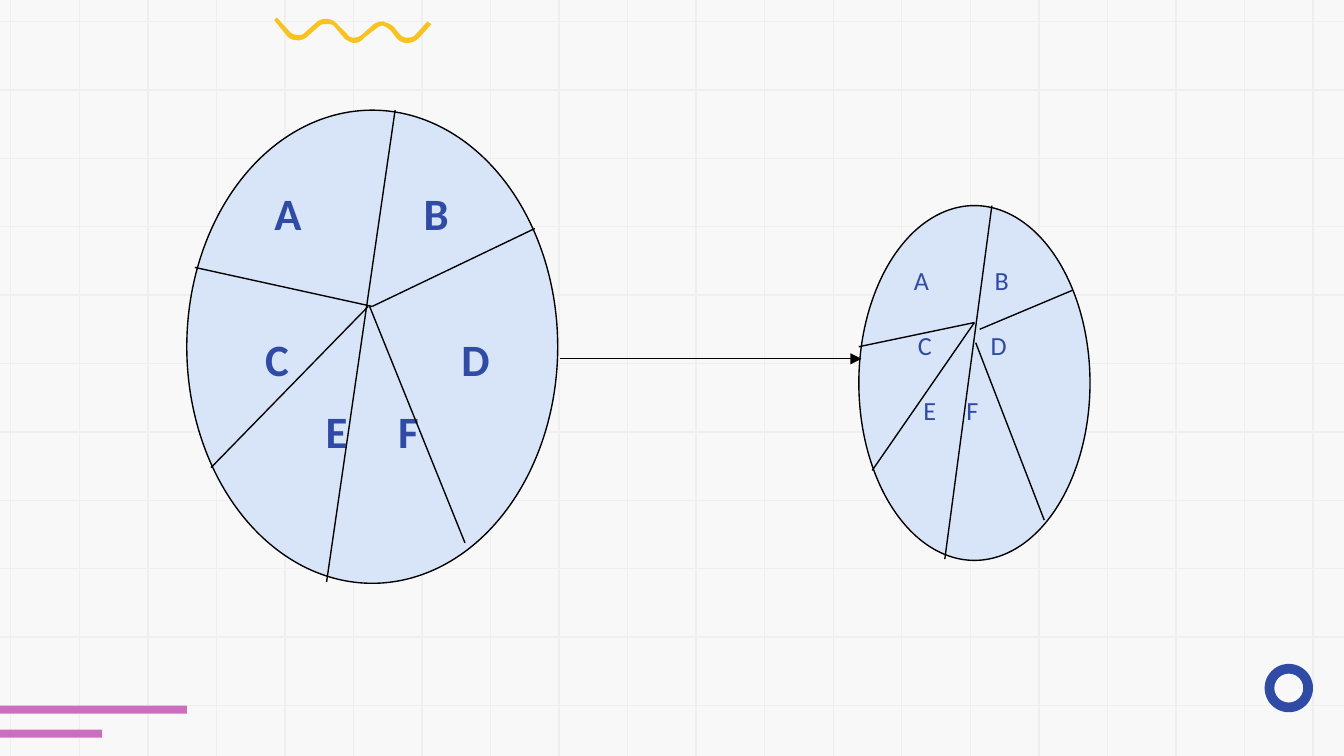
import dataclasses
import typing

import lxml.etree
import pptx
import pptx.dml.color
import pptx.enum.shapes
import pptx.enum.text
import pptx.oxml.ns
import pptx.util

Inches = pptx.util.Inches
Shapes = pptx.enum.shapes.MSO_SHAPE
Point = tuple[float, float]


@dataclasses.dataclass(frozen=True)
class Theme:
    font: str = "Calibri"
    background: str = "F8F8F8"
    grid: str = "EFEFEF"
    ink: str = "000000"
    disc: str = "D8E4F7"
    blue: str = "304BA6"
    pink: str = "CB6EBE"
    yellow: str = "F8C220"
    large: float = 24
    small: float = 14
    stroke: float = 0.75


class LabelRow(typing.NamedTuple):
    letters: str
    stops: Point  # distances from the left edge of the text
    space_before: float = 0


@dataclasses.dataclass(frozen=True)
class Disc:
    box: tuple[float, float, float, float]
    size: float
    bold: bool
    rows: list[LabelRow]
    cuts: list[tuple[Point, Point]]


THEME = Theme()
WIDTH = 10
HEIGHT = WIDTH * 9 / 16

DISCS = [
    Disc((1.39, 0.82, 2.76, 3.52), THEME.large, True,
         [LabelRow("AB", (0.15, 1.26)),
          LabelRow("CD", (0.08, 1.54), 49),
          LabelRow("EF", (0.53, 1.07), 10)],
         [((2.94, 0.82), (2.43, 4.33)), ((2.77, 2.28), (3.98, 1.7)),
          ((2.77, 2.28), (1.45, 1.99)), ((2.75, 2.28), (3.46, 4.04)),
          ((2.74, 2.28), (1.57, 3.48))]),
    Disc((6.39, 1.53, 1.72, 2.64), THEME.small, False,
         [LabelRow("AB", (0.06, 0.66)),
          LabelRow("CD", (0.09, 0.63), 18),
          LabelRow("EF", (0.13, 0.45), 18)],
         [((7.38, 1.53), (7.03, 4.16)), ((7.29, 2.45), (7.98, 2.16)),
          ((7.25, 2.4), (6.39, 2.58)), ((7.26, 2.55), (7.77, 3.87)),
          ((7.25, 2.4), (6.49, 3.5))]),
]

# Outline of the wave: two numbers are a corner, six are a cubic curve
WAVE = [
    (2.06, 0.13), (2.04, 0.15), (2.13, 0.26),
    (2.15, 0.29, 2.18, 0.3, 2.22, 0.3), (2.24, 0.3, 2.27, 0.29, 2.29, 0.27),
    (2.38, 0.19), (2.39, 0.18, 2.41, 0.18, 2.43, 0.18),
    (2.46, 0.18, 2.48, 0.18, 2.49, 0.2), (2.55, 0.27),
    (2.57, 0.3, 2.6, 0.31, 2.63, 0.32), (2.66, 0.32, 2.69, 0.31, 2.71, 0.28),
    (2.79, 0.22), (2.81, 0.2, 2.83, 0.19, 2.85, 0.19),
    (2.87, 0.2, 2.89, 0.21, 2.91, 0.23), (2.94, 0.27),
    (2.96, 0.3, 2.99, 0.32, 3.03, 0.32), (3.06, 0.32, 3.09, 0.31, 3.12, 0.28),
    (3.21, 0.18), (3.18, 0.16), (3.09, 0.26),
    (3.07, 0.28, 3.05, 0.28, 3.03, 0.28), (3, 0.28, 2.99, 0.27, 2.97, 0.25),
    (2.93, 0.2), (2.91, 0.18, 2.88, 0.17, 2.85, 0.16),
    (2.82, 0.16, 2.79, 0.17, 2.77, 0.19), (2.69, 0.26),
    (2.68, 0.27, 2.66, 0.28, 2.63, 0.28), (2.61, 0.28, 2.59, 0.27, 2.58, 0.25),
    (2.51, 0.18), (2.49, 0.16, 2.47, 0.14, 2.42, 0.14),
    (2.4, 0.14, 2.37, 0.15, 2.35, 0.17), (2.26, 0.25),
    (2.25, 0.26, 2.23, 0.26, 2.22, 0.26), (2.19, 0.26, 2.17, 0.25, 2.16, 0.24),
]


def rgb(value: str) -> pptx.dml.color.RGBColor:
    return pptx.dml.color.RGBColor.from_string(value)


def add_node(parent, tag: str, **attributes: str):
    return lxml.etree.SubElement(parent, pptx.oxml.ns.qn(tag), attributes)


def paint(shape, fill: str, line: str | None = None) -> None:
    shape.shadow.inherit = False
    shape.fill.solid()
    shape.fill.fore_color.rgb = rgb(fill)
    if line:
        shape.line.color.rgb = rgb(line)
        shape.line.width = pptx.util.Pt(THEME.stroke)
    else:
        shape.line.fill.background()


def add_preset(page, kind, box, fill: str, line: str | None = None):
    shape = page.shapes.add_shape(kind, *map(Inches, box))
    paint(shape, fill, line)
    return shape


def add_line(page, start: Point, end: Point, color: str, arrow: bool = False) -> None:
    line = page.shapes.add_connector(
        pptx.enum.shapes.MSO_CONNECTOR.STRAIGHT, *map(Inches, (*start, *end)))
    line.line.color.rgb = rgb(color)
    line.line.width = pptx.util.Pt(THEME.stroke)
    if arrow:
        outline = line._element.spPr.find(pptx.oxml.ns.qn("a:ln"))
        add_node(outline, "a:tailEnd", type="triangle")
    add_node(line._element.spPr, "a:effectLst")


def write(para, text: str, *, size: float, bold: bool, color: str,
          stops: typing.Iterable[float], space_before: float) -> None:
    para.alignment = pptx.enum.text.PP_ALIGN.LEFT
    para.space_before = pptx.util.Pt(space_before)
    tabs = add_node(para._p.get_or_add_pPr(), "a:tabLst")
    for stop in stops:
        add_node(tabs, "a:tab", pos=str(int(Inches(stop))), algn="l")
    span = para.add_run()
    span.text = text
    span.font.name = THEME.font
    span.font.size = pptx.util.Pt(size)
    span.font.bold = bold
    span.font.color.rgb = rgb(color)


def add_disc(page, disc: Disc) -> None:
    oval = add_preset(page, Shapes.OVAL, disc.box, THEME.disc, THEME.ink)
    frame = oval.text_frame
    frame.word_wrap = True
    frame.vertical_anchor = pptx.enum.text.MSO_ANCHOR.TOP
    for index, row in enumerate(disc.rows):
        para = frame.add_paragraph() if index else frame.paragraphs[0]
        write(para, "".join("\t" + letter for letter in row.letters),
              size=disc.size, bold=disc.bold, color=THEME.blue,
              stops=row.stops, space_before=row.space_before)
    for start, end in disc.cuts:
        add_line(page, start, end, THEME.ink)


def flatten(outline, steps: int = 6) -> list[Point]:
    points = [outline[0]]
    for part in outline[1:]:
        if len(part) == 2:
            points.append(part)
            continue
        controls = [points[-1], part[:2], part[2:4], part[4:]]
        for step in range(1, steps + 1):
            t = step / steps
            weights = ((1 - t) ** 3, 3 * t * (1 - t) ** 2, 3 * t * t * (1 - t), t ** 3)
            points.append(tuple(
                sum(w * c[axis] for w, c in zip(weights, controls)) for axis in (0, 1)))
    return points


def add_outline(page, points: list[Point], fill: str) -> None:
    first, *rest = [(Inches(x), Inches(y)) for x, y in points]
    builder = page.shapes.build_freeform(*first)
    builder.add_line_segments(rest, close=True)
    paint(builder.convert_to_shape(), fill)


def spread(first: float, last: float, count: int) -> list[float]:
    return [first + (last - first) * index / (count - 1) for index in range(count)]


def main() -> None:
    deck = pptx.Presentation()
    deck.slide_width, deck.slide_height = Inches(WIDTH), Inches(HEIGHT)
    page = deck.slides.add_slide(deck.slide_layouts[6])
    page.background.fill.solid()
    page.background.fill.fore_color.rgb = rgb(THEME.background)

    # Background grid
    for y in spread(0.16, 5.25, 11):
        add_line(page, (WIDTH, y), (0, y), THEME.grid)
    for x in spread(0.08, 9.77, 20):
        add_line(page, (x, 0), (x, HEIGHT), THEME.grid)

    # Corner decorations
    for top, width in ((5.25, 1.39), (5.43, 0.76)):
        add_preset(page, Shapes.RECTANGLE, (0, top, width, 0.06), THEME.pink)
    ring = add_preset(page, Shapes.DONUT, (9.41, 4.94, 0.36, 0.36), THEME.blue)
    ring.adjustments[0] = 0.2
    add_outline(page, flatten(WAVE), THEME.yellow)

    # Divided discs and the arrow between them
    for disc in DISCS:
        add_disc(page, disc)
    add_line(page, (4.17, 2.67), (6.41, 2.67), THEME.ink, arrow=True)

    deck.save("out.pptx")


if __name__ == "__main__":
    main()
